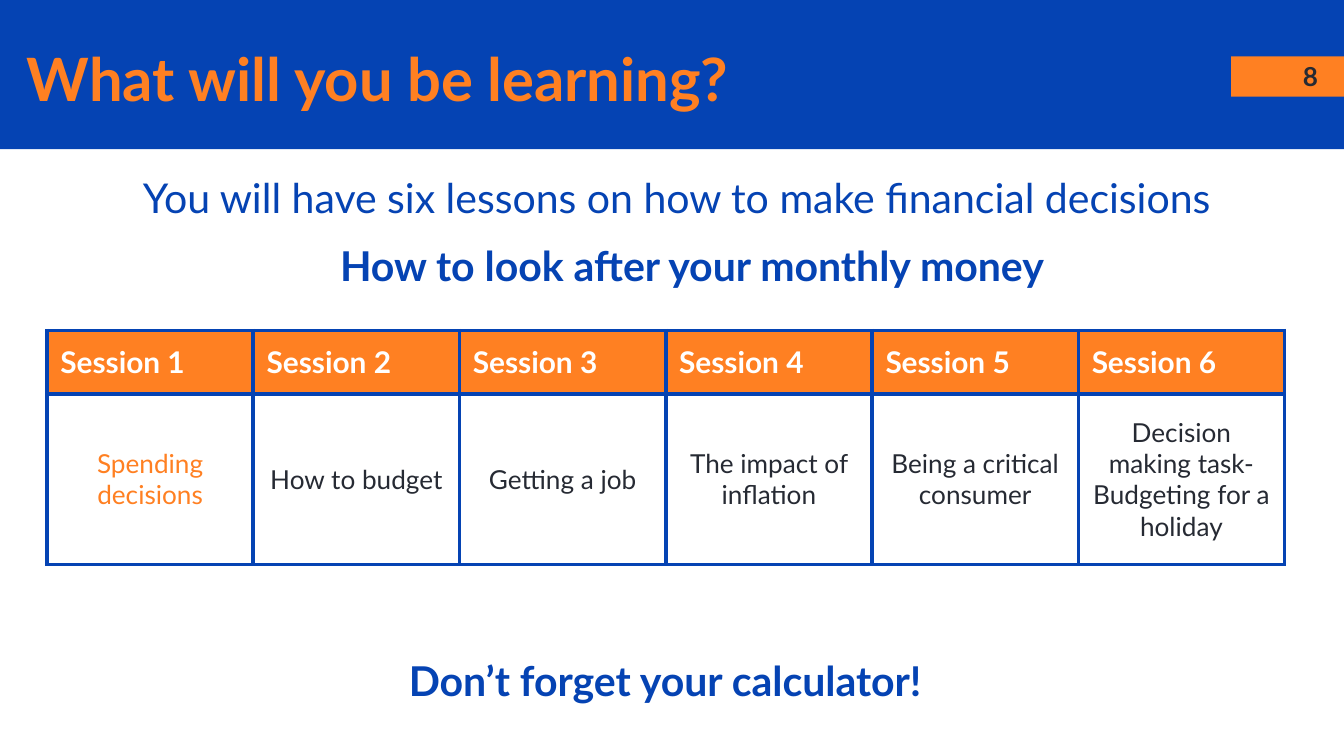
from lxml import etree
from pptx import Presentation
from pptx.dml.color import RGBColor
from pptx.enum.shapes import MSO_SHAPE
from pptx.enum.text import MSO_ANCHOR, MSO_AUTO_SIZE, PP_ALIGN
from pptx.oxml.ns import qn
from pptx.util import Inches, Pt

LEFT, CENTER = PP_ALIGN.LEFT, PP_ALIGN.CENTER
TOP, MIDDLE = MSO_ANCHOR.TOP, MSO_ANCHOR.MIDDLE
WIDTH = 10
HEIGHT = WIDTH * 9 / 16
FONT = "Lato"
COLORS = {"blue": "0543B3", "orange": "FF8022", "dark": "262A33", "white": "FFFFFF"}

TITLE = "What will you be learning?"
BANDS = [((0, 0, WIDTH, 1.11), "blue"), ((9.16, 0.42, 0.84, 0.3), "orange")]
# text, (left, top, width, height), line spacing, anchor, font
LINES = [
    ("8", (9.49, 0.44, 0.52, 0.25), 1, MIDDLE,
     {"size": 14, "color": "dark", "bold": True}),
    ("How to look after your monthly money", (2.01, 1.69, 6.28, 0.57), 1, TOP,
     {"size": 22, "color": "blue", "bold": True}),
    ("You will have six lessons on how to make financial decisions",
     (0.17, 1.13, 9.73, 0.57), 1.15, TOP, {"size": 22, "color": "blue", "bold": False}),
    ("Don’t forget your calculator!", (2.66, 4.78, 4.58, 0.57), 1, TOP,
     {"size": 22, "color": "blue", "bold": True}),
]
SESSIONS = [
    "Spending decisions",
    "How to budget",
    "Getting a job",
    "The impact of inflation",
    "Being a critical consumer",
    "Decision making task- Budgeting for a holiday",
]
CURRENT_SESSION = 1
TABLE_LEFT, TABLE_TOP = 0.35, 2.46
TABLE_WIDTH = 9.21
ROW_HEIGHTS = [0.47, 1.27]
BORDER_POINTS = 2.25


def rgb(name):
    return RGBColor.from_string(COLORS[name])


def place(shape, area):
    for name, value in zip(("left", "top", "width", "height"), area):
        setattr(shape, name, Inches(value))


def write(frame, text, font, align, spacing=1):
    frame.word_wrap = True
    para = frame.paragraphs[0]
    para.alignment, para.line_spacing = align, spacing
    span = para.add_run()
    span.text = text
    formats = {"name": FONT, "size": Pt(font["size"]), "bold": font["bold"]}
    for name, value in formats.items():
        setattr(span.font, name, value)
    span.font.color.rgb = rgb(font["color"])


def set_margins(item, inches):
    for side in ("left", "top", "right", "bottom"):
        setattr(item, f"margin_{side}", Inches(inches))


def add_borders(cell):
    properties = cell._tc.get_or_add_tcPr()
    for position, tag in enumerate(("a:lnL", "a:lnR", "a:lnT", "a:lnB")):
        line = etree.Element(qn(tag), w=str(Pt(BORDER_POINTS)))
        fill = etree.SubElement(line, qn("a:solidFill"))
        etree.SubElement(fill, qn("a:srgbClr"), val=COLORS["blue"])
        properties.insert(position, line)


def add_sessions(page):
    count = len(SESSIONS)
    frame = page.shapes.add_table(
        len(ROW_HEIGHTS), count, Inches(TABLE_LEFT), Inches(TABLE_TOP),
        Inches(TABLE_WIDTH), Inches(sum(ROW_HEIGHTS)))
    table = frame.table
    for row, height in zip(table.rows, ROW_HEIGHTS):
        row.height = Inches(height)
    for index, topic in enumerate(SESSIONS):
        number = index + 1
        header, body = table.cell(0, index), table.cell(1, index)
        for cell in (header, body):
            set_margins(cell, 0.1)
        header.fill.solid()
        header.fill.fore_color.rgb = rgb("orange")
        body.fill.background()
        body.vertical_anchor = MIDDLE
        write(header.text_frame, f"Session {number}",
              {"size": 16, "color": "white", "bold": True}, LEFT)
        color = "orange" if number == CURRENT_SESSION else "dark"
        write(body.text_frame, topic, {"size": 14, "color": color, "bold": False}, CENTER)
        add_borders(header)
        add_borders(body)


def main():
    deck = Presentation()
    deck.slide_width, deck.slide_height = Inches(WIDTH), Inches(HEIGHT)
    page = deck.slides.add_slide(deck.slide_layouts[5])

    for area, color in BANDS:
        band = page.shapes.add_shape(MSO_SHAPE.RECTANGLE, *map(Inches, area))
        band.shadow.inherit = False
        band.fill.solid()
        band.fill.fore_color.rgb = rgb(color)
        band.line.fill.background()

    title = page.shapes.title
    title.element.getparent().append(title.element)  # in front of the bands
    place(title, (0.2, 0.23, 8.78, 0.85))
    set_margins(title.text_frame, 0)
    title.text_frame.auto_size = MSO_AUTO_SIZE.NONE
    title.text_frame.vertical_anchor = TOP
    write(title.text_frame, TITLE, {"size": 32, "color": "orange", "bold": True}, LEFT, 1.15)

    add_sessions(page)
    for text, area, spacing, anchor, font in LINES:
        box = page.shapes.add_textbox(*map(Inches, area))
        set_margins(box.text_frame, 0.1)
        box.text_frame.vertical_anchor = anchor
        write(box.text_frame, text, font, CENTER, spacing)

    deck.save("out.pptx")


if __name__ == "__main__":
    main()
